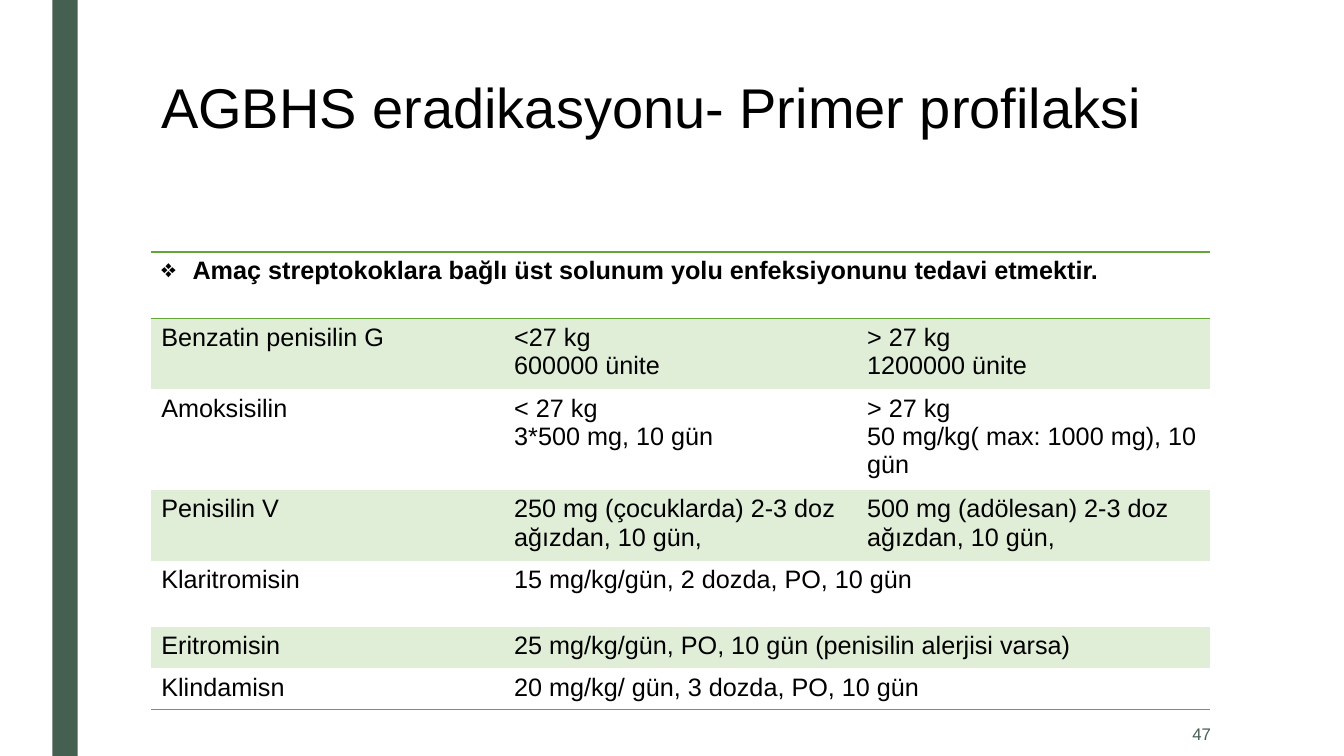
from lxml.etree import SubElement
from pptx import Presentation
from pptx.dml.color import RGBColor
from pptx.enum.shapes import MSO_SHAPE
from pptx.enum.text import MSO_ANCHOR, PP_ALIGN
from pptx.oxml import parse_xml
from pptx.oxml.ns import nsdecls, qn
from pptx.util import Inches, Pt

COLORS = {"bar": "455F51", "line": "63A537", "band": "E0EDD7", "text": "000000"}
FONT = "Arial"
NO_STYLE = "{2D5ABB26-0587-4C30-8999-92F81FD0307C}"


def style_font(paragraph, size, color, bold=False):
    paragraph.font.name = FONT
    paragraph.font.size = Pt(size)
    paragraph.font.bold = bold
    paragraph.font.color.rgb = RGBColor.from_string(COLORS[color])


def add_border(cell, side):
    border = parse_xml(
        f'<a:{side} {nsdecls("a")} w="12700"><a:solidFill>'
        f'<a:srgbClr val="{COLORS["line"]}"/></a:solidFill></a:{side}>'
    )
    cell._tc.get_or_add_tcPr().insert(0, border)


presentation = Presentation()
presentation.slide_width = Inches(13.33)
presentation.slide_height = Inches(7.5)
slide = presentation.slides.add_slide(presentation.slide_layouts[6])

side_bar = slide.shapes.add_shape(
    MSO_SHAPE.RECTANGLE, Inches(0.52), 0, Inches(0.25), Inches(7.5)
)
side_bar.shadow.inherit = False
side_bar.fill.solid()
side_bar.fill.fore_color.rgb = RGBColor.from_string(COLORS["bar"])
side_bar.line.fill.background()

title = slide.shapes.add_textbox(Inches(1.5), Inches(0.75), Inches(10.5), Inches(1.62))
title.text_frame.word_wrap = True
paragraph = title.text_frame.paragraphs[0]
paragraph.text = "AGBHS eradikasyonu- Primer profilaksi"
paragraph.line_spacing = 0.89
style_font(paragraph, 40, "text")

rows = [
    (0.66, ["Amaç streptokoklara bağlı üst solunum yolu enfeksiyonunu tedavi etmektir."]),
    (0.66, ["Benzatin penisilin G", "<27 kg\n600000 ünite", "> 27 kg\n1200000 ünite"]),
    (0.94, ["Amoksisilin", "< 27 kg\n3*500 mg, 10 gün",
            "> 27 kg\n50 mg/kg( max: 1000 mg), 10 gün"]),
    (0.66, ["Penisilin V", "250 mg (çocuklarda) 2-3 doz ağızdan, 10 gün,",
            "500 mg (adölesan) 2-3 doz ağızdan, 10 gün,"]),
    (0.66, ["Klaritromisin", "15 mg/kg/gün, 2 dozda, PO, 10 gün"]),
    (0.41, ["Eritromisin", "25 mg/kg/gün, PO, 10 gün (penisilin alerjisi varsa)"]),
    (0.41, ["Klindamisn", "20 mg/kg/ gün, 3 dozda, PO, 10 gün"]),
]
table = slide.shapes.add_table(
    len(rows), 3, Inches(1.5), Inches(2.5), Inches(10.5), Inches(4.4)
).table
table.first_row = False
table.horz_banding = False
table._tbl.tblPr.find(qn("a:tableStyleId")).text = NO_STYLE

for row_index, (height, texts) in enumerate(rows):
    table.rows[row_index].height = Inches(height)
    for column_index in range(3):
        cell = table.cell(row_index, column_index)
        if row_index % 2:
            cell.fill.solid()
            cell.fill.fore_color.rgb = RGBColor.from_string(COLORS["band"])
        else:
            cell.fill.background()
        if row_index in (0, len(rows) - 1):
            add_border(cell, "lnB")
        if row_index == 0:
            add_border(cell, "lnT")
        if column_index < len(texts):
            cell.text = texts[column_index]
        for paragraph in cell.text_frame.paragraphs:
            style_font(paragraph, 18, "text", bold=row_index == 0)
    if len(texts) < 3:
        table.cell(row_index, len(texts) - 1).merge(table.cell(row_index, 2))

properties = table.cell(0, 0).text_frame.paragraphs[0]._p.get_or_add_pPr()
properties.set("marL", str(Inches(0.31)))
properties.set("indent", str(-Inches(0.31)))
bullet = SubElement(properties, qn("a:buChar"))
bullet.set("char", "❖")
properties.insert(0, bullet)

page_number = slide.shapes.add_textbox(
    Inches(10.36), Inches(7.06), Inches(1.75), Inches(0.44)
)
page_number.text_frame.word_wrap = True
page_number.text_frame.vertical_anchor = MSO_ANCHOR.MIDDLE
paragraph = page_number.text_frame.paragraphs[0]
paragraph.text = "47"
paragraph.alignment = PP_ALIGN.RIGHT
style_font(paragraph, 12, "bar")

presentation.save("out.pptx")
